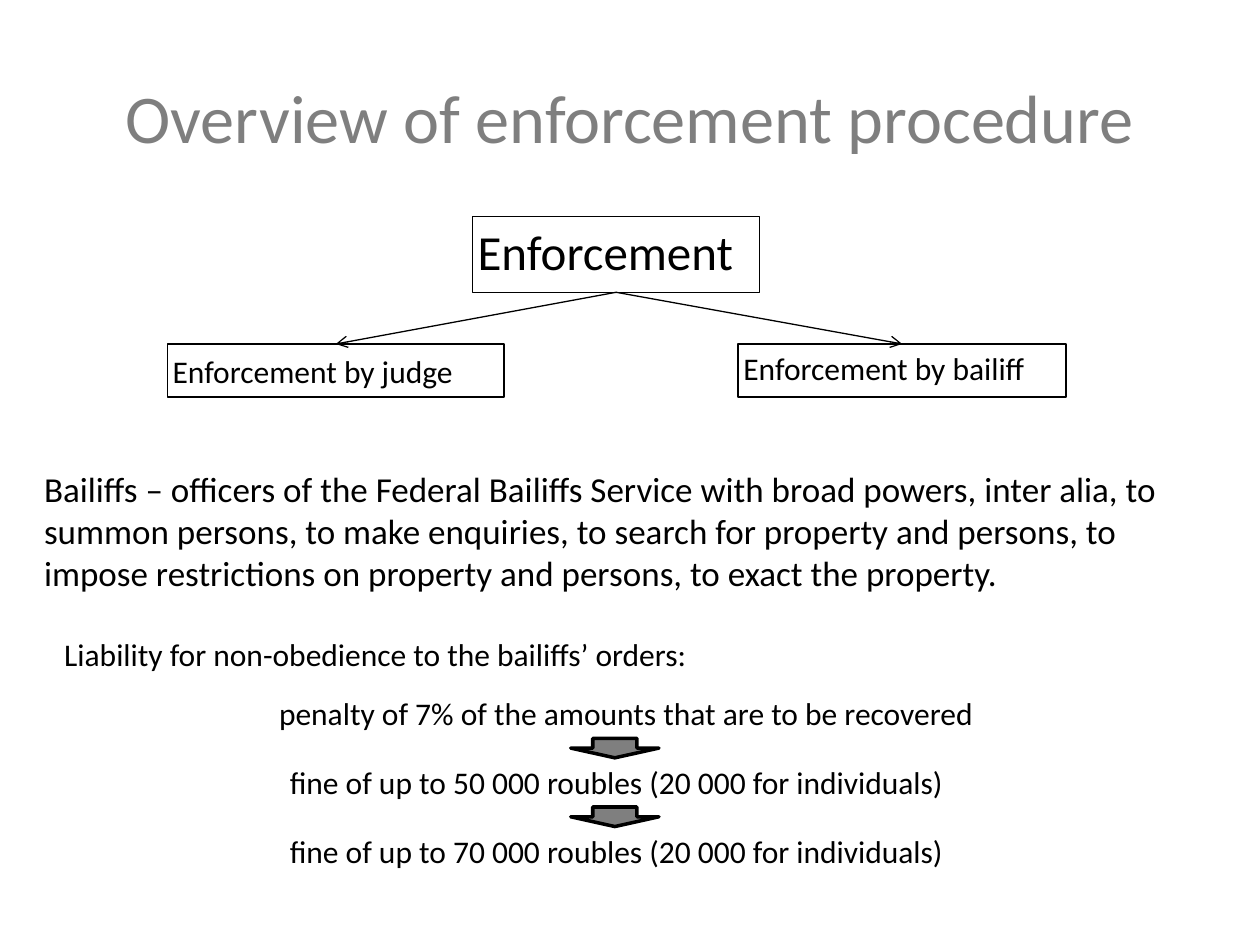
from dataclasses import dataclass

from lxml import etree
from pptx import Presentation
from pptx.dml.color import RGBColor
from pptx.enum.shapes import MSO_CONNECTOR, MSO_SHAPE
from pptx.enum.text import MSO_ANCHOR, PP_ALIGN
from pptx.oxml.ns import qn
from pptx.util import Inches, Pt

RECT, DOWN_ARROW = MSO_SHAPE.RECTANGLE, MSO_SHAPE.DOWN_ARROW
STRAIGHT = MSO_CONNECTOR.STRAIGHT
LEFT, CENTER = PP_ALIGN.LEFT, PP_ALIGN.CENTER
TOP, MIDDLE = MSO_ANCHOR.TOP, MSO_ANCHOR.MIDDLE
TOP_SITE, BOTTOM_SITE = 0, 2
WIDTH, HEIGHT = Inches(10), Inches(7.5)
COLS, ROWS = 100, 75


@dataclass(frozen=True)
class Theme:
    font: str = "Calibri"
    ink: RGBColor = RGBColor(0, 0, 0)
    grey: RGBColor = RGBColor(0x7F, 0x7F, 0x7F)
    title: float = 39
    root: float = 28
    lead: float = 20
    body: float = 18
    hairline: float = 0.75
    border: float = 1
    heavy: float = 2
    inset: float = 0.04


THEME = Theme()


def place(col, row, cols, rows):
    return (int(WIDTH * col / COLS), int(HEIGHT * row / ROWS),
            int(WIDTH * cols / COLS), int(HEIGHT * rows / ROWS))


def write(shape, text, size, color=THEME.ink, align=LEFT, anchor=TOP):
    tf = shape.text_frame
    inset = Inches(THEME.inset)
    frame_format = {"word_wrap": True, "vertical_anchor": anchor,
                    "margin_left": inset, "margin_right": inset,
                    "margin_top": inset, "margin_bottom": inset}
    for name, value in frame_format.items():
        setattr(tf, name, value)
    p = tf.paragraphs[0]
    p.alignment = align
    r = p.add_run()
    r.text = text
    for name, value in {"name": THEME.font, "size": Pt(size)}.items():
        setattr(r.font, name, value)
    r.font.color.rgb = color


def add_text(s, cell, text, size, **style):
    write(s.shapes.add_textbox(*place(*cell)), text, size, **style)


def outline(shape, width):
    shape.shadow.inherit = False
    shape.line.color.rgb = THEME.ink
    shape.line.width = Pt(width)


def add_box(s, cell, text, size, border, anchor=TOP):
    sp = s.shapes.add_shape(RECT, *place(*cell))
    sp.fill.background()
    outline(sp, border)
    write(sp, text, size, anchor=anchor)
    return sp


def add_branch(s, parent, child):
    line = s.shapes.add_connector(STRAIGHT, 0, 0, 0, 0)
    line.begin_connect(parent, BOTTOM_SITE)
    line.end_connect(child, TOP_SITE)
    line.line.color.rgb = THEME.ink
    line.line.width = Pt(THEME.hairline)
    etree.SubElement(line.line._get_or_add_ln(), qn("a:tailEnd"), type="arrow")
    etree.SubElement(line._element.spPr, qn("a:effectLst"))


def add_step_arrow(s, cell):
    sp = s.shapes.add_shape(DOWN_ARROW, *place(*cell))
    sp.fill.solid()
    sp.fill.fore_color.rgb = THEME.grey
    outline(sp, THEME.heavy)


def add_tree(s):
    root = add_box(s, (37.5, 17.2, 22.8, 6), "Enforcement", THEME.root, THEME.hairline)
    branches = [("Enforcement by judge", 13.3, 26.7, MIDDLE),
                ("Enforcement by bailiff", 58.6, 26, TOP)]
    for text, col, cols, anchor in branches:
        child = add_box(s, (col, 27.3, cols, 4.2), text, THEME.body, THEME.border, anchor)
        add_branch(s, root, child)


def add_penalties(s):
    add_text(s, (4.7, 50, 85.3, 3.9), "Liability for non-obedience to the bailiffs’ orders:",
             THEME.body)
    add_text(s, (8.6, 54.7, 82.2, 3.9), "penalty of 7% of the amounts that are to be recovered",
             THEME.body, align=CENTER)
    fines = ["fine of up to 50 000 roubles (20 000 for individuals)",
             "fine of up to 70 000 roubles (20 000 for individuals)"]
    for i, fine in enumerate(fines):
        row = 58.6 + 5.45 * i
        add_step_arrow(s, (45.3, row, 7, 1.55))
        add_text(s, (22.6, row + 1.55, 56.4, 3.9), fine, THEME.body)


def main():
    prs = Presentation()
    prs.slide_width, prs.slide_height = WIDTH, HEIGHT
    s = prs.slides.add_slide(prs.slide_layouts[6])
    add_text(s, (5, 3, 90, 12.5), "Overview of enforcement procedure", THEME.title,
             color=THEME.grey, align=CENTER, anchor=MIDDLE)
    add_tree(s)
    add_text(s, (3.1, 36.7, 90, 10.8),
             "Bailiffs – officers of the Federal Bailiffs Service with broad powers, "
             "inter alia, to summon persons, to make enquiries, to search for property "
             "and persons, to impose restrictions on property and persons, to exact the "
             "property.", THEME.lead)
    add_penalties(s)
    prs.save("out.pptx")


if __name__ == "__main__":
    main()
